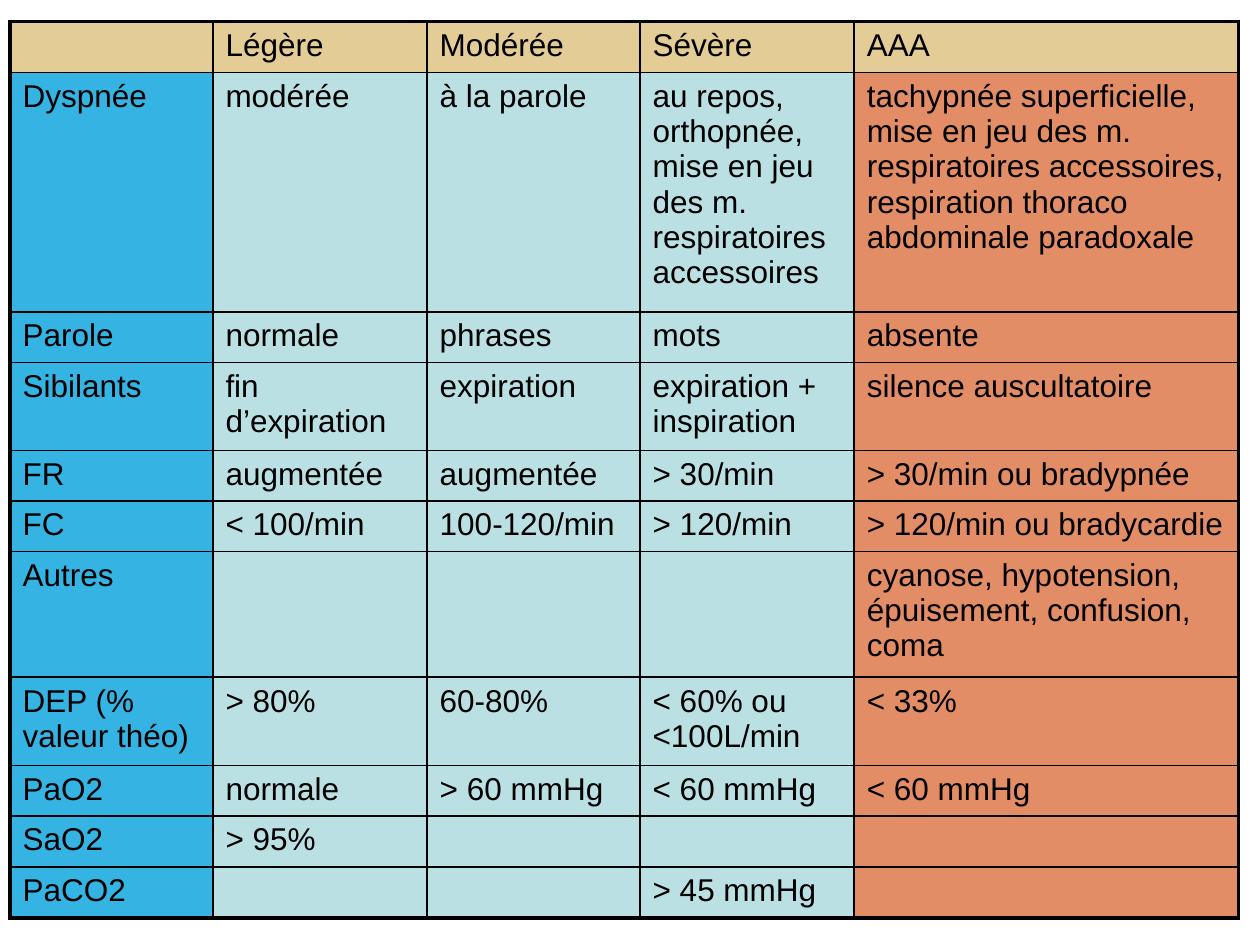
import pptx
import pptx.dml.color
import pptx.oxml
import pptx.oxml.ns
import pptx.util
from pptx.util import Inches

HEADER, LABEL, BODY, ALERT = "E3CC96", "35B4E3", "BBE0E3", "E38D67"
BLACK = "000000"
THIN, THICK = 1, 2.25

COL_WIDTHS = [1.61, 1.7, 1.69, 1.7, 3.05]
ROW_HEIGHTS = [0.4, 1.9, 0.4, 0.7, 0.4, 0.4, 1, 0.7, 0.4, 0.4, 0.4]
SEVERITY = [
    ["", "Légère", "Modérée", "Sévère", "AAA"],
    ["Dyspnée", "modérée", "à la parole",
     "au repos, orthopnée, mise en jeu des m. respiratoires accessoires",
     "tachypnée superficielle, mise en jeu des m. respiratoires accessoires, "
     "respiration thoraco abdominale paradoxale"],
    ["Parole", "normale", "phrases", "mots", "absente"],
    ["Sibilants", "fin d’expiration", "expiration", "expiration + inspiration",
     "silence auscultatoire"],
    ["FR", "augmentée", "augmentée", "> 30/min", "> 30/min ou bradypnée"],
    ["FC", "< 100/min", "100-120/min", "> 120/min", "> 120/min ou bradycardie"],
    ["Autres", "", "", "", "cyanose, hypotension, épuisement, confusion, coma"],
    ["DEP (% valeur théo)", "> 80%", "60-80%", "< 60% ou <100L/min", "< 33%"],
    ["PaO2", "normale", "> 60 mmHg", "< 60 mmHg", "< 60 mmHg"],
    ["SaO2", "> 95%", "", "", ""],
    ["PaCO2", "", "", "> 45 mmHg", ""],
]


def rgb(value):
    return pptx.dml.color.RGBColor.from_string(value)


def set_borders(cell, widths):
    """Draw the left, right, top and bottom borders, widths in points."""
    tc_pr = cell._tc.get_or_add_tcPr()
    for i, (side, width) in enumerate(zip("LRTB", widths)):
        tc_pr.insert(i, pptx.oxml.parse_xml(
            f'<a:ln{side} {pptx.oxml.ns.nsdecls("a")} w="{pptx.util.Pt(width)}">'
            f'<a:solidFill><a:srgbClr val="{BLACK}"/></a:solidFill></a:ln{side}>'))


def write_cell(cell, text):
    p = cell.text_frame.paragraphs[0]
    p.font.size = pptx.util.Pt(18)
    if not text:
        return
    # Spacing before as a share of the line height
    p._p.get_or_add_pPr().insert(0, pptx.oxml.parse_xml(
        f'<a:spcBef {pptx.oxml.ns.nsdecls("a")}><a:spcPct val="20000"/></a:spcBef>'))
    r = p.add_run()
    r.text = text
    r.font.size = pptx.util.Pt(18)
    r.font.name = "Arial"
    r.font.color.rgb = rgb(BLACK)


def cell_fill(row, col, last_col):
    if row == 0:
        return HEADER
    if col == 0:
        return LABEL
    return ALERT if col == last_col else BODY


def add_severity_table(s, left, top, width, height):
    last_row, last_col = len(SEVERITY) - 1, len(COL_WIDTHS) - 1
    table = s.shapes.add_table(last_row + 1, last_col + 1,
                               left, top, width, height).table
    table.first_row = table.horz_banding = False

    # Grid, scaled to the box
    for column, w in zip(table.columns, COL_WIDTHS):
        column.width = int(width * w / sum(COL_WIDTHS))
    for row, h in zip(table.rows, ROW_HEIGHTS):
        row.height = int(height * h / sum(ROW_HEIGHTS))

    # Cells, with a thicker outer frame
    for i, texts in enumerate(SEVERITY):
        for j, text in enumerate(texts):
            cell = table.cell(i, j)
            write_cell(cell, text)
            cell.fill.solid()
            cell.fill.fore_color.rgb = rgb(cell_fill(i, j, last_col))
            outer = (j == 0, j == last_col, i == 0, i == last_row)
            set_borders(cell, [THICK if edge else THIN for edge in outer])


def main():
    prs = pptx.Presentation()
    prs.slide_width, prs.slide_height = Inches(10), Inches(7.5)
    s = prs.slides.add_slide(prs.slide_layouts[6])
    add_severity_table(s, Inches(0.08), Inches(0.17), Inches(9.75), Inches(7.1))
    prs.save("out.pptx")


if __name__ == "__main__":
    main()
